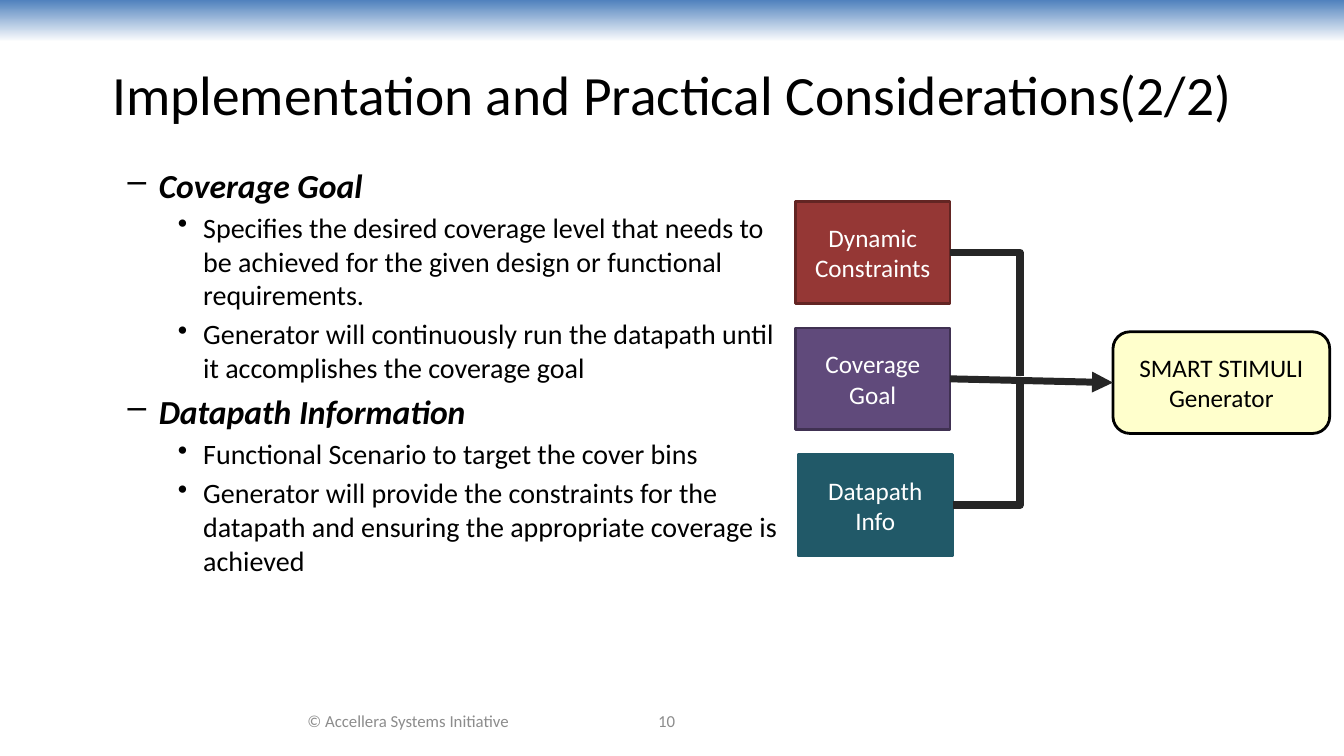
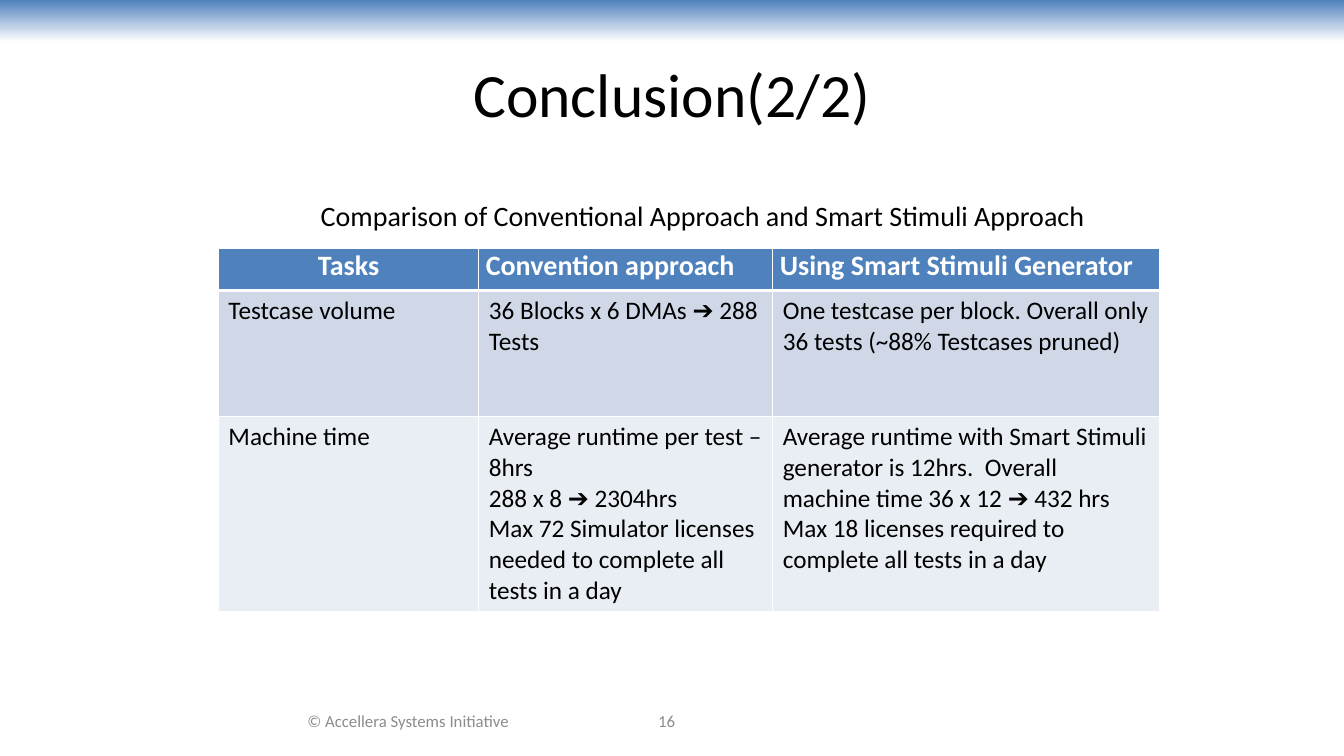
from lxml import etree
from pptx import Presentation, util as u
from pptx.dml.color import RGBColor
from pptx.enum import shapes, text
from pptx.oxml import ns

COLUMNS, ROWS = 160, 90
CENTER, LEFT = text.PP_ALIGN.CENTER, text.PP_ALIGN.LEFT
MIDDLE, TOP = text.MSO_ANCHOR.MIDDLE, text.MSO_ANCHOR.TOP
RIGHT_SIDE, LEFT_SIDE = 3, 1


def color(hex_code):
    return RGBColor.from_string(hex_code)


def add_xml(parent, tag, **attributes):
    return etree.SubElement(parent, ns.qn(tag), attributes)


class SlideMaker:
    FONT = "Calibri"
    BLUE, WHITE, BLACK = "4F81BD", "FFFFFF", "000000"
    FOOTER_GRAY, LINE_GRAY = "8C8C8C", "262626"
    BULLETS = {1: ("–", 0.81, -0.31, 24), 2: ("•", 1.25, -0.25, 20)}

    def __init__(self):
        self.deck = Presentation()
        self.deck.slide_width = u.Inches(13.33)
        self.deck.slide_height = u.Inches(7.5)
        self.page = None

    def x(self, columns):
        return round(self.deck.slide_width * columns / COLUMNS)

    def y(self, rows):
        return round(self.deck.slide_height * rows / ROWS)

    def area(self, left, top, width, height):
        """Turn grid columns and rows into slide lengths."""
        return self.x(left), self.y(top), self.x(width), self.y(height)

    def new_page(self, title, number, title_size=44):
        """Start a slide with the shared band, title and footer."""
        self.page = self.deck.slides.add_slide(self.deck.slide_layouts[6])
        self.band()
        self.text_box(title, (8, 3.6, 144, 15), title_size, self.BLACK, CENTER, MIDDLE)
        for label, left, width in (("© Accellera Systems Initiative", 29.3, 38.6),
                                   (str(number), 64, 30.7)):
            self.text_box(label, (left, 83.4, width, 4.8), 12,
                          self.FOOTER_GRAY, CENTER, MIDDLE)

    def band(self):
        band = self.page.shapes.add_shape(shapes.MSO_SHAPE.RECTANGLE,
                                          *self.area(0, 0, COLUMNS, 5))
        band.shadow.inherit = False
        band.line.fill.background()
        band.fill.gradient()
        band.fill.gradient_angle = 270
        for stop, position, shade in zip(band.fill.gradient_stops, (0, 1),
                                         (self.BLUE, self.WHITE)):
            stop.position = position
            stop.color.rgb = color(shade)

    def add_span(self, para, words, size, shade, align=LEFT, bold=False, italic=False):
        para.alignment = align
        span = para.add_run()
        span.text = words
        font = span.font
        font.name, font.size = self.FONT, u.Pt(size)
        font.bold, font.italic = bold, italic
        font.color.rgb = color(shade)

    def paragraphs(self, frame, count):
        """Give the frame's first paragraph, then new ones."""
        for index in range(count):
            yield frame.add_paragraph() if index else frame.paragraphs[0]

    def text_box(self, words, place, size, shade, align=LEFT, anchor=TOP):
        frame = self.page.shapes.add_textbox(*self.area(*place)).text_frame
        frame.word_wrap = True
        frame.vertical_anchor = anchor
        self.add_span(frame.paragraphs[0], words, size, shade, align)

    def bullet_list(self, items, place):
        frame = self.page.shapes.add_textbox(*self.area(*place)).text_frame
        frame.word_wrap = True
        for index, para in enumerate(self.paragraphs(frame, len(items))):
            level, words = items[index]
            sign, margin, indent, size = self.BULLETS[level]
            props = para._p.get_or_add_pPr()
            props.set("marL", str(u.Inches(margin)))
            props.set("indent", str(u.Inches(indent)))
            add_xml(props, "a:buChar", char=sign)
            para.level = level
            para.space_before = u.Pt(size * 0.2 if index else 0)
            heading = level == 1
            self.add_span(para, words, size, self.BLACK, bold=heading, italic=heading)

    def block(self, kind, words, place, fill, outline, shade):
        box = self.page.shapes.add_shape(kind, *self.area(*place))
        box.shadow.inherit = False
        box.fill.solid()
        box.fill.fore_color.rgb = color(fill)
        box.line.color.rgb = color(outline)
        box.line.width = u.Pt(2)
        box.text_frame.word_wrap = True
        box.text_frame.vertical_anchor = MIDDLE
        self.add_span(box.text_frame.paragraphs[0], words, 18, shade, CENTER)
        return box

    def connector(self, kind, source, end, width):
        """Draw a line from the right side of source to a slide point."""
        line = self.page.shapes.add_connector(
            kind, source.left + source.width, source.top + source.height // 2, *end)
        line.begin_connect(source, RIGHT_SIDE)
        line.line.color.rgb = color(self.LINE_GRAY)
        line.line.width = u.Pt(width)
        add_xml(line._element.spPr, "a:effectLst")
        return line

    def arrow(self, source, target):
        end = target.left, target.top + target.height // 2
        line = self.connector(shapes.MSO_CONNECTOR.STRAIGHT, source, end, 5)
        line.end_connect(target, LEFT_SIDE)
        add_xml(line._element.spPr.find(ns.qn("a:ln")), "a:tailEnd", type="triangle")

    def elbow(self, source, column, row):
        """Run right from source, then turn once to a grid point."""
        line = self.connector(shapes.MSO_CONNECTOR.ELBOW, source,
                              (self.x(column), self.y(row)), 5.5)
        line._element.spPr.find(ns.qn("a:prstGeom")).set("prst", "bentConnector2")

    def table(self, rows, left, top, widths, heights):
        place = self.area(left, top, sum(widths), sum(heights))
        table = self.page.shapes.add_table(len(rows), len(widths), *place).table
        table.first_row = table.horz_banding = False
        for column, width in zip(table.columns, widths):
            column.width = self.x(width)
        for r, (row, height) in enumerate(zip(rows, heights)):
            table.rows[r].height = self.y(height)
            for c, words in enumerate(row):
                self.table_cell(table.cell(r, c), words, r, c)

    def table_cell(self, cell, words, row, column):
        header = row == 0
        borders = {"L": 1, "R": 1, "T": 3 if row == 1 else 1, "B": 3 if header else 1}
        for side, width in borders.items():
            line = add_xml(cell._tc.get_or_add_tcPr(), f"a:ln{side}", w=str(u.Pt(width)))
            add_xml(add_xml(line, "a:solidFill"), "a:srgbClr", val=self.WHITE)
        cell.fill.solid()
        cell.fill.fore_color.rgb = color((self.BLUE, "D0D8E8", "E9EDF4")[row])
        if header:
            cell.margin_left = cell.margin_right = u.Inches(0.07)
            cell.margin_top = cell.margin_bottom = 0
        lines = words.split("\n")
        for para, line in zip(self.paragraphs(cell.text_frame, len(lines)), lines):
            self.add_span(para, line, 20 if header else 18,
                          self.WHITE if header else self.BLACK,
                          CENTER if header and column == 0 else LEFT, bold=header)


def considerations(maker):
    maker.new_page("Implementation and Practical Considerations(2/2)", 10, 39.6)
    maker.bullet_list([
        (1, "Coverage Goal"),
        (2, "Specifies the desired coverage level that needs to be achieved "
            "for the given design or functional requirements."),
        (2, "Generator will continuously run the datapath until it accomplishes "
            "the coverage goal"),
        (1, "Datapath Information"),
        (2, "Functional Scenario to target the cover bins"),
        (2, "Generator will provide the constraints for the datapath and ensuring "
            "the appropriate coverage is achieved"),
    ], (8, 19, 86.5, 59))

    inputs = [("Dynamic Constraints", 94.7, "953735", "632523"),
              ("Coverage Goal", 94.7, "604A7B", "403152"),
              ("Datapath Info", 95, "215968", "215968")]
    constraints, goal, datapath = [
        maker.block(shapes.MSO_SHAPE.FLOWCHART_PROCESS, words,
                    (left, 24 + 15.05 * index, 18.4, 12.1), fill, outline, maker.WHITE)
        for index, (words, left, fill, outline) in enumerate(inputs)]
    generator = maker.block(shapes.MSO_SHAPE.ROUNDED_RECTANGLE, "SMART STIMULI Generator",
                            (132.5, 39.5, 25.8, 12.1), "FFFFCC", maker.BLACK, maker.BLACK)
    maker.elbow(constraints, 121.4, 44.8)
    maker.arrow(goal, generator)
    maker.elbow(datapath, 121.4, 45.5)


def conclusion(maker):
    maker.new_page("Conclusion(2/2)", 16)
    maker.table([
        ("Tasks", "Convention approach", "Using Smart Stimuli Generator"),
        ("Testcase volume", "36 Blocks x 6 DMAs ➔ 288 Tests",
         "One testcase per block. Overall only 36 tests (~88% Testcases pruned)"),
        ("Machine time",
         "Average runtime per test – 8hrs\n288 x 8 ➔ 2304hrs\n"
         "Max 72 Simulator licenses needed to complete all tests in a day",
         "Average runtime with Smart Stimuli generator is 12hrs.  Overall machine time "
         "36 x 12 ➔ 432 hrs\nMax 18 licenses required to complete all tests in a day"),
    ], 26, 29.6, (31, 35, 46), (5, 15, 23.2))
    maker.text_box("Comparison of Conventional Approach and Smart Stimuli Approach",
                   (37, 23, 107.6, 9.2), 20, maker.BLACK)


def main():
    maker = SlideMaker()
    considerations(maker)
    conclusion(maker)
    maker.deck.save("out.pptx")


if __name__ == "__main__":
    main()
